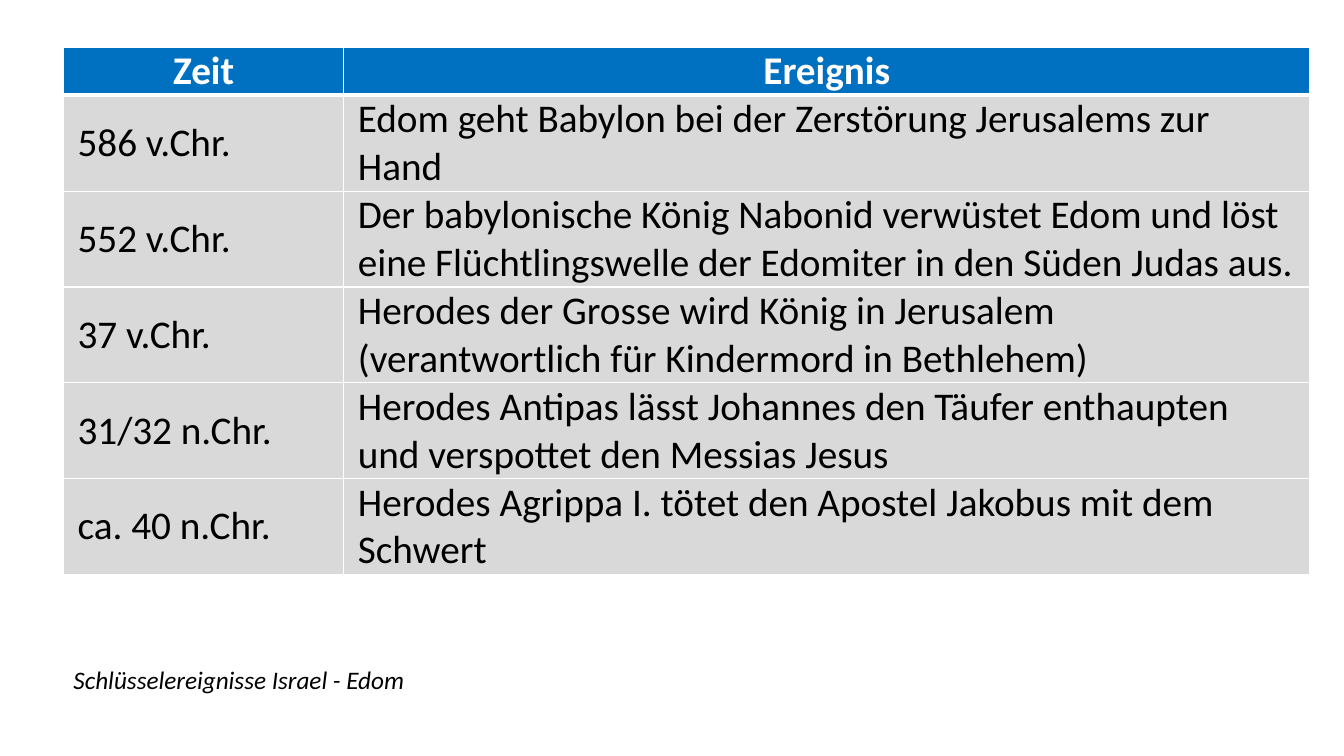
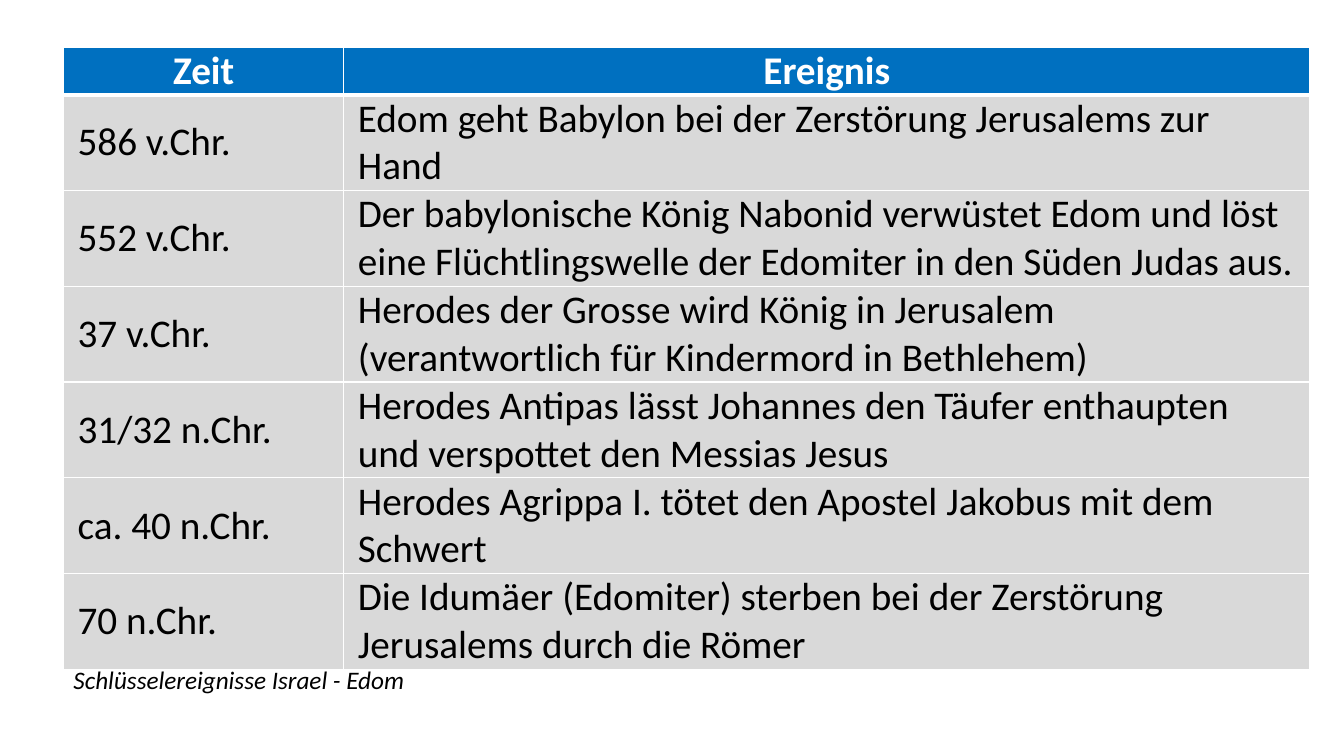
from lxml import etree
from pptx import Presentation
from pptx.dml.color import RGBColor
from pptx.enum import text
from pptx.oxml import ns
from pptx.util import Inches, Pt

# Content
HEADER = ("Zeit", "Ereignis")
EVENTS = [
    ("586 v.Chr.", "Edom geht Babylon bei der Zerstörung Jerusalems zur Hand"),
    ("552 v.Chr.", "Der babylonische König Nabonid verwüstet Edom und löst "
                   "eine Flüchtlingswelle der Edomiter in den Süden Judas aus."),
    ("37 v.Chr.", "Herodes der Grosse wird König in Jerusalem "
                  "(verantwortlich für Kindermord in Bethlehem)"),
    ("31/32 n.Chr.", "Herodes Antipas lässt Johannes den Täufer enthaupten "
                     "und verspottet den Messias Jesus"),
    ("ca. 40 n.Chr.", "Herodes Agrippa I. tötet den Apostel Jakobus mit dem Schwert"),
    ("70 n.Chr.", "Die Idumäer (Edomiter) sterben bei der Zerstörung "
                  "Jerusalems durch die Römer"),
]
EVENTS_PER_SLIDE = (5, 6)
CAPTION = "Schlüsselereignisse Israel - Edom"

# Shared look, lengths in inches
COLORS = {"header": "0070C0", "body": "D9D9D9", "light": "FFFFFF", "dark": "000000"}
FONT = "Calibri"
LEFT, TOP, CAPTION_TOP = 0.63, 0.47, 6.54
COLUMNS = (2.78, 9.58)
HEADER_HEIGHT, EVENT_HEIGHT = 0.47, 0.95
CELL_INSET = 0.14


def write(tf, words, size, color="dark", bold=False, italic=False, align=None):
    p = tf.paragraphs[0]
    p.alignment = align
    r = p.add_run()
    r.text = words
    font = r.font
    font.name, font.size, font.bold, font.italic = FONT, Pt(size), bold, italic
    font.color.rgb = RGBColor.from_string(COLORS[color])


def set_borders(cell, top, bottom):
    tc_pr = cell._tc.get_or_add_tcPr()
    for i, (side, width) in enumerate(zip("LRTB", (1, 1, top, bottom))):
        ln = etree.Element(ns.qn(f"a:ln{side}"), w=str(Pt(width)))
        fill = etree.SubElement(ln, ns.qn("a:solidFill"))
        etree.SubElement(fill, ns.qn("a:srgbClr"), val=COLORS["light"])
        tc_pr.insert(i, ln)


def format_cell(cell, words, row):
    header = row == 0
    cell.fill.solid()
    cell.fill.fore_color.rgb = RGBColor.from_string(COLORS["header" if header else "body"])
    cell.margin_left = cell.margin_right = Inches(CELL_INSET)
    cell.margin_top = cell.margin_bottom = 0
    cell.vertical_anchor = text.MSO_ANCHOR.MIDDLE
    write(cell.text_frame, words, 28, color="light" if header else "dark", bold=header,
          align=text.PP_ALIGN.CENTER if header else None)
    set_borders(cell, top=3 if row == 1 else 1, bottom=3 if header else 1)


def add_events(slide, events):
    rows = [HEADER, *events]
    heights = [HEADER_HEIGHT] + [EVENT_HEIGHT] * len(events)
    table = slide.shapes.add_table(
        len(rows), len(COLUMNS), Inches(LEFT), Inches(TOP),
        Inches(sum(COLUMNS)), Inches(sum(heights))).table
    table.horz_banding = False
    for column, width in zip(table.columns, COLUMNS):
        column.width = Inches(width)
    for i, (words, height) in enumerate(zip(rows, heights)):
        table.rows[i].height = Inches(height)
        for j, entry in enumerate(words):
            format_cell(table.cell(i, j), entry, i)


def add_caption(slide):
    tf = slide.shapes.add_textbox(
        Inches(LEFT), Inches(CAPTION_TOP), Inches(3.65), Inches(0.4)).text_frame
    tf.word_wrap = False
    tf.auto_size = text.MSO_AUTO_SIZE.SHAPE_TO_FIT_TEXT
    write(tf, CAPTION, 18, italic=True)


def main():
    prs = Presentation()
    prs.slide_width, prs.slide_height = Inches(13.33), Inches(7.5)
    for count in EVENTS_PER_SLIDE:
        slide = prs.slides.add_slide(prs.slide_layouts[6])
        add_events(slide, EVENTS[:count])
        add_caption(slide)
    prs.save("out.pptx")


if __name__ == "__main__":
    main()
